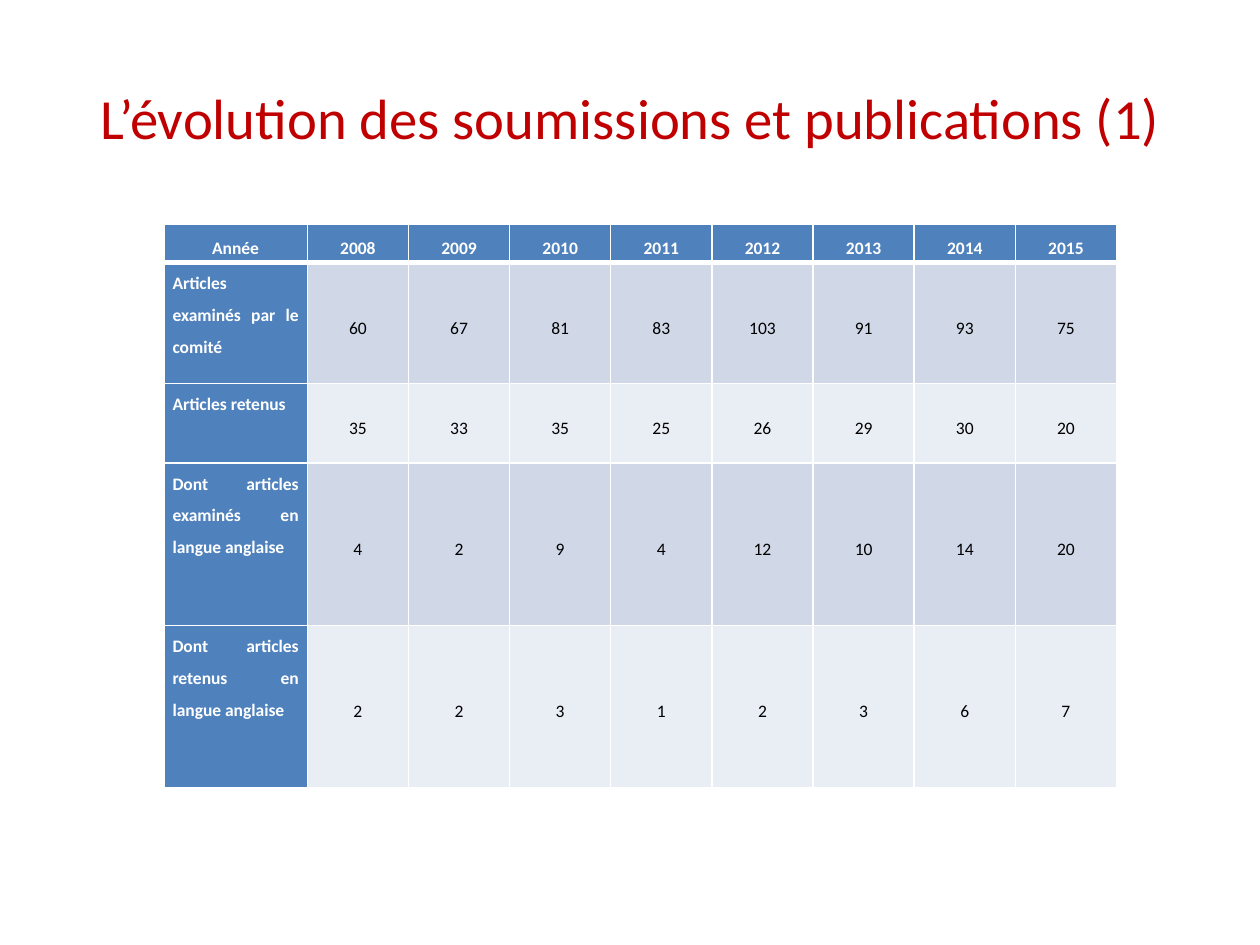
from dataclasses import dataclass

from lxml.etree import SubElement
from pptx import Presentation
from pptx.dml.color import RGBColor as Rgb
from pptx.enum.text import MSO_ANCHOR as Anchor
from pptx.enum.text import MSO_AUTO_SIZE as AutoSize
from pptx.enum.text import PP_ALIGN as Align
from pptx.oxml.ns import qn
from pptx.slide import Slide
from pptx.table import _Cell as Cell
from pptx.util import Pt


@dataclass(frozen=True)
class Theme:
    font: str = "Calibri"
    title_size: float = 32.4
    table_size: float = 10
    title: str = "C00000"
    header: str = "4F81BD"
    bands: tuple[str, str] = ("D0D8E8", "E9EDF4")
    light: str = "FFFFFF"
    dark: str = "000000"
    thin: float = 1
    thick: float = 3


@dataclass(frozen=True)
class Series:
    label: str
    height: float
    values: tuple[int, ...]


@dataclass(frozen=True)
class CellStyle:
    fill: str
    color: str
    bold: bool
    align: Align
    anchor: Anchor


THEME = Theme()
HEADER = CellStyle(THEME.header, THEME.light, True, Align.CENTER, Anchor.MIDDLE)
LABEL = CellStyle(THEME.header, THEME.light, True, Align.JUSTIFY, Anchor.TOP)
BANDS = [
    CellStyle(fill, THEME.dark, False, Align.CENTER, Anchor.MIDDLE)
    for fill in THEME.bands
]

YEARS = Series("Année", 21.6, tuple(range(2008, 2016)))
ARTICLES = [
    Series("Articles examinés par le comité", 69.1, (60, 67, 81, 83, 103, 91, 93, 75)),
    Series("Articles retenus", 45.4, (35, 33, 35, 25, 26, 29, 30, 20)),
    Series("Dont articles examinés en langue anglaise", 92.9, (4, 2, 9, 4, 12, 10, 14, 20)),
    Series("Dont articles retenus en langue anglaise", 92.9, (2, 2, 3, 1, 2, 3, 6, 7)),
]
LABEL_WIDTH = 82
YEAR_WIDTH = 57.8


def draw_borders(cell: Cell, top: float, bottom: float) -> None:
    properties = cell._tc.get_or_add_tcPr()
    widths = {"L": THEME.thin, "R": THEME.thin, "T": top, "B": bottom}
    for side, width in widths.items():
        line = SubElement(properties, qn(f"a:ln{side}"), w=str(Pt(width)))
        fill = SubElement(line, qn("a:solidFill"))
        SubElement(fill, qn("a:srgbClr"), val=THEME.light)


def write_cell(cell: Cell, text: str, style: CellStyle) -> None:
    cell.fill.solid()
    cell.fill.fore_color.rgb = Rgb.from_string(style.fill)
    cell.vertical_anchor = style.anchor
    cell.margin_left = cell.margin_right = Pt(5)
    cell.margin_top = cell.margin_bottom = Pt(0)
    cell.text = text
    para = cell.text_frame.paragraphs[0]
    para.alignment = style.align
    para.line_spacing = 1.5
    para.font.name = THEME.font
    para.font.size = Pt(THEME.table_size)
    para.font.bold = style.bold
    para.font.color.rgb = Rgb.from_string(style.color)


def draw_title(page: Slide, text: str) -> None:
    title = page.shapes.title
    title.left, title.top = Pt(36), Pt(21.6)
    title.width, title.height = Pt(648), Pt(90)
    frame = title.text_frame
    frame.text = text
    frame.auto_size = AutoSize.NONE
    frame.vertical_anchor = Anchor.MIDDLE
    para = frame.paragraphs[0]
    para.alignment = Align.CENTER
    para.font.name = THEME.font
    para.font.size = Pt(THEME.title_size)
    para.font.color.rgb = Rgb.from_string(THEME.title)


def draw_table(page: Slide, header: Series, body: list[Series]) -> None:
    rows = [header, *body]
    widths = [LABEL_WIDTH] + [YEAR_WIDTH] * len(header.values)
    height = sum(series.height for series in rows)
    table = page.shapes.add_table(
        len(rows), len(widths), Pt(93.6), Pt(128.4), Pt(sum(widths)), Pt(height)
    ).table
    for column, width in zip(table.columns, widths):
        column.width = Pt(width)
    for index, series in enumerate(rows):
        table.rows[index].height = Pt(series.height)
        top = THEME.thick if index == 1 else THEME.thin
        bottom = THEME.thick if index == 0 else THEME.thin
        label_style = LABEL if index else HEADER
        value_style = BANDS[(index - 1) % 2] if index else HEADER
        for position, content in enumerate((series.label, *series.values)):
            cell = table.cell(index, position)
            draw_borders(cell, top, bottom)
            write_cell(cell, str(content), value_style if position else label_style)


def main() -> None:
    deck = Presentation()
    deck.slide_width, deck.slide_height = Pt(720), Pt(540)
    page = deck.slides.add_slide(deck.slide_layouts.get_by_name("Title Only"))
    draw_title(page, "L’évolution des soumissions et publications (1)")
    draw_table(page, YEARS, ARTICLES)
    deck.save("out.pptx")


if __name__ == "__main__":
    main()
